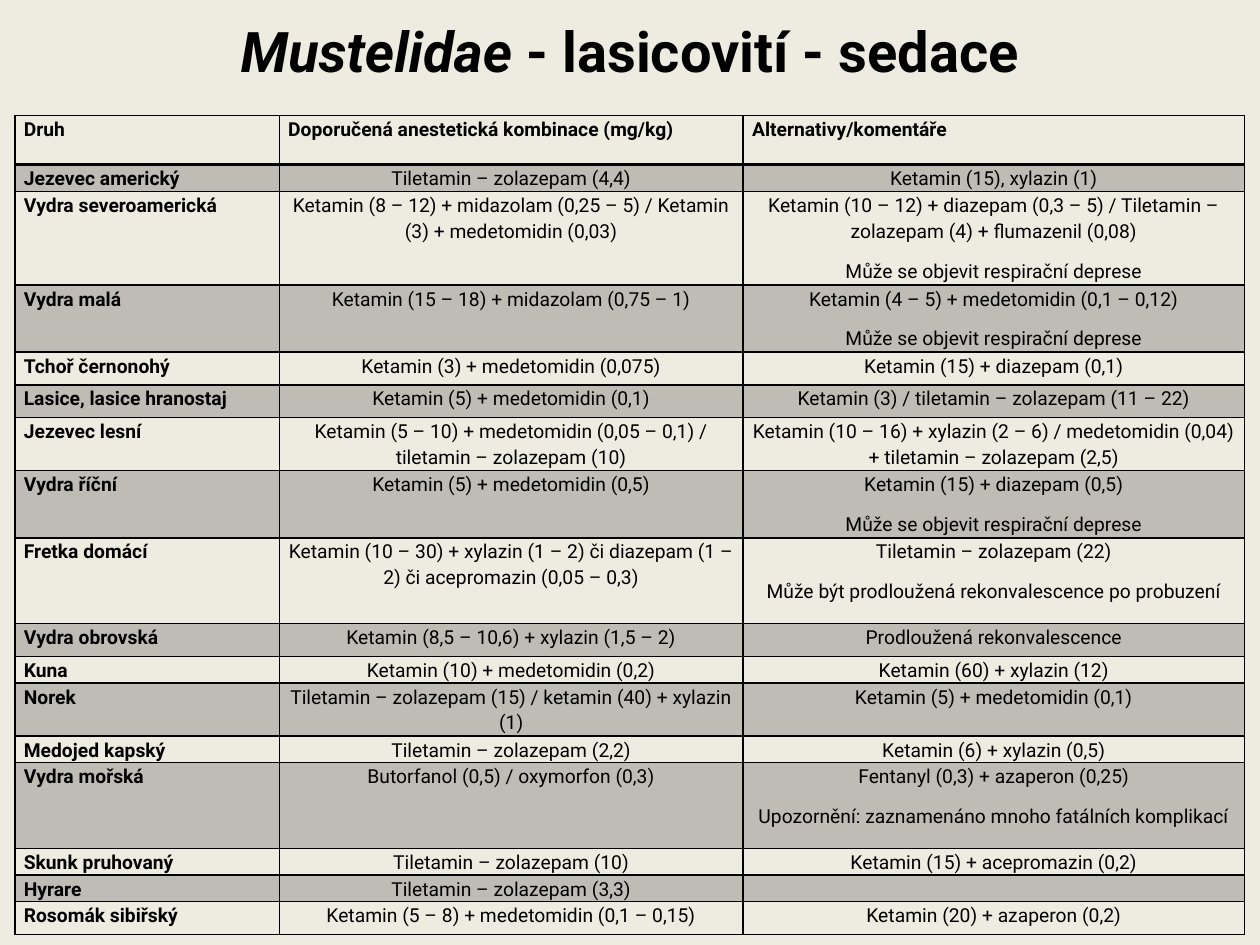
from typing import NamedTuple

from lxml import etree
from pptx import Presentation
from pptx.dml.color import RGBColor
from pptx.enum.text import MSO_ANCHOR, PP_ALIGN
from pptx.oxml.ns import qn
from pptx.util import Cm, Pt

CENTER, LEFT, MIDDLE = PP_ALIGN.CENTER, PP_ALIGN.LEFT, MSO_ANCHOR.MIDDLE
COLORS = {"background": "EEECE1", "ink": "000000"}
FONT = "Roboto"
BAND_ALPHA = 20000  # thousandths of a percent
CELL_FORMAT = {"margin_left": Cm(0.18), "margin_right": Cm(0.18),
               "margin_top": 0, "margin_bottom": 0}
PARA_FORMAT = {"line_spacing": 1.15, "space_after": Pt(8)}
COL_WIDTHS = (5.33, 9.35, 10.11)
DEPRESSION = "Může se objevit respirační deprese"


class Row(NamedTuple):
    height: float  # cm
    species: str
    combination: str
    comments: tuple = ()


HEADER = Row(0.99, "Druh", "Doporučená anestetická kombinace (mg/kg)",
             ("Alternativy/komentáře",))
ROWS = [
    Row(0.48, "Jezevec americký", "Tiletamin – zolazepam (4,4)",
        ("Ketamin (15), xylazin (1)",)),
    Row(1.73, "Vydra severoamerická",
        "Ketamin (8 – 12) + midazolam (0,25 – 5) / Ketamin (3) + medetomidin (0,03)",
        ("Ketamin (10 – 12) + diazepam (0,3 – 5) / Tiletamin – zolazepam (4) + flumazenil (0,08)",
         DEPRESSION)),
    Row(1.22, "Vydra malá", "Ketamin (15 – 18) + midazolam (0,75 – 1)",
        ("Ketamin (4 – 5) + medetomidin (0,1 – 0,12)", DEPRESSION)),
    Row(0.66, "Tchoř černonohý", "Ketamin (3) + medetomidin (0,075)",
        ("Ketamin (15) + diazepam (0,1)",)),
    Row(0.66, "Lasice, lasice hranostaj", "Ketamin (5) + medetomidin (0,1)",
        ("Ketamin (3) / tiletamin – zolazepam (11 – 22)",)),
    Row(1.02, "Jezevec lesní",
        "Ketamin (5 – 10) + medetomidin (0,05 – 0,1) / tiletamin – zolazepam (10)",
        ("Ketamin (10 – 16) + xylazin (2 – 6) / medetomidin (0,04) + tiletamin – zolazepam (2,5)",)),
    Row(1.22, "Vydra říční", "Ketamin (5) + medetomidin (0,5)",
        ("Ketamin (15) + diazepam (0,5)", DEPRESSION)),
    Row(1.73, "Fretka domácí",
        "Ketamin (10 – 30) + xylazin (1 – 2) či diazepam (1 – 2) či acepromazin (0,05 – 0,3)",
        ("Tiletamin – zolazepam (22)", "Může být prodloužená rekonvalescence po probuzení")),
    Row(0.66, "Vydra obrovská", "Ketamin (8,5 – 10,6) + xylazin (1,5 – 2)",
        ("Prodloužená rekonvalescence",)),
    Row(0.48, "Kuna", "Ketamin (10) + medetomidin (0,2)", ("Ketamin (60) + xylazin (12)",)),
    Row(0.99, "Norek", "Tiletamin – zolazepam (15) / ketamin (40) + xylazin (1)",
        ("Ketamin (5) + medetomidin (0,1)",)),
    Row(0.48, "Medojed kapský", "Tiletamin – zolazepam (2,2)", ("Ketamin (6) + xylazin (0,5)",)),
    Row(1.73, "Vydra mořská", "Butorfanol (0,5) / oxymorfon (0,3)",
        ("Fentanyl (0,3) + azaperon (0,25)",
         "Upozornění: zaznamenáno mnoho fatálních komplikací")),
    Row(0.48, "Skunk pruhovaný", "Tiletamin – zolazepam (10)",
        ("Ketamin (15) + acepromazin (0,2)",)),
    Row(0.48, "Hyrare", "Tiletamin – zolazepam (3,3)"),
    Row(0.66, "Rosomák sibiřský", "Ketamin (5 – 8) + medetomidin (0,1 – 0,15)",
        ("Ketamin (20) + azaperon (0,2)",)),
]


def set_format(target, values: dict) -> None:
    for name, value in values.items():
        setattr(target, name, value)


def add_run(p, text: str, size: float, bold: bool, italic: bool = False) -> None:
    r = p.add_run()
    r.text = text
    set_format(r.font, {"name": FONT, "size": Pt(size), "bold": bold, "italic": italic})
    r.font.color.rgb = RGBColor.from_string(COLORS["ink"])


def set_borders(cell, widths: dict) -> None:
    """Draw solid cell borders; widths maps L, R, T, B to points."""
    tc_pr = cell._tc.get_or_add_tcPr()
    for side, width in widths.items():
        ln = etree.SubElement(tc_pr, qn(f"a:ln{side}"), w=str(Pt(width)))
        fill = etree.SubElement(ln, qn("a:solidFill"))
        etree.SubElement(fill, qn("a:srgbClr"), val=COLORS["ink"])


def set_band(cell) -> None:
    cell.fill.solid()
    cell.fill.fore_color.rgb = RGBColor.from_string(COLORS["ink"])
    color = cell._tc.tcPr.find(qn("a:solidFill")).find(qn("a:srgbClr"))
    etree.SubElement(color, qn("a:alpha"), val=str(BAND_ALPHA))


def fill_cell(cell, lines: tuple, align, bold: bool) -> None:
    set_format(cell, CELL_FORMAT)
    tf = cell.text_frame
    for i, line in enumerate(lines):
        p = tf.add_paragraph() if i else tf.paragraphs[0]
        set_format(p, PARA_FORMAT)
        p.alignment = align
        add_run(p, line, 11, bold)
    if not lines:  # keeps the empty cell as low as its row
        etree.SubElement(tf.paragraphs[0]._p, qn("a:endParaRPr"), sz="1100")


def add_title(s) -> None:
    tf = s.shapes.add_textbox(0, 0, Cm(25.4), Cm(2.03)).text_frame
    set_format(tf, {"word_wrap": True, "vertical_anchor": MIDDLE})
    p = tf.paragraphs[0]
    p.alignment = CENTER
    add_run(p, "Mustelidae", 32, True, True)
    add_run(p, " - lasicovití - sedace", 32, True)


def add_sedation_table(s) -> None:
    rows = [HEADER, *ROWS]
    table = s.shapes.add_table(len(rows), len(COL_WIDTHS), Cm(0.3), Cm(2.33),
                               Cm(sum(COL_WIDTHS)), Cm(sum(r.height for r in rows))).table
    set_format(table, {"first_row": False, "horz_banding": False})
    for column, width in zip(table.columns, COL_WIDTHS):
        column.width = Cm(width)
    for i, row in enumerate(rows):
        table.rows[i].height = Cm(row.height)
        header = i == 0
        for j, lines in enumerate(((row.species,), (row.combination,), row.comments)):
            cell = table.cell(i, j)
            label = header or j == 0
            fill_cell(cell, lines, LEFT if label else CENTER, label)
            set_borders(cell, {"L": 1, "R": 1, "T": 2 if i == 1 else 1, "B": 2 if header else 1})
            if i % 2:
                set_band(cell)
            else:
                cell.fill.background()


def main() -> None:
    prs = Presentation()
    set_format(prs, {"slide_width": Cm(25.4), "slide_height": Cm(19.05)})
    s = prs.slides.add_slide(prs.slide_layouts[6])
    s.background.fill.solid()
    s.background.fill.fore_color.rgb = RGBColor.from_string(COLORS["background"])
    add_title(s)
    add_sedation_table(s)
    prs.save("out.pptx")


if __name__ == "__main__":
    main()
